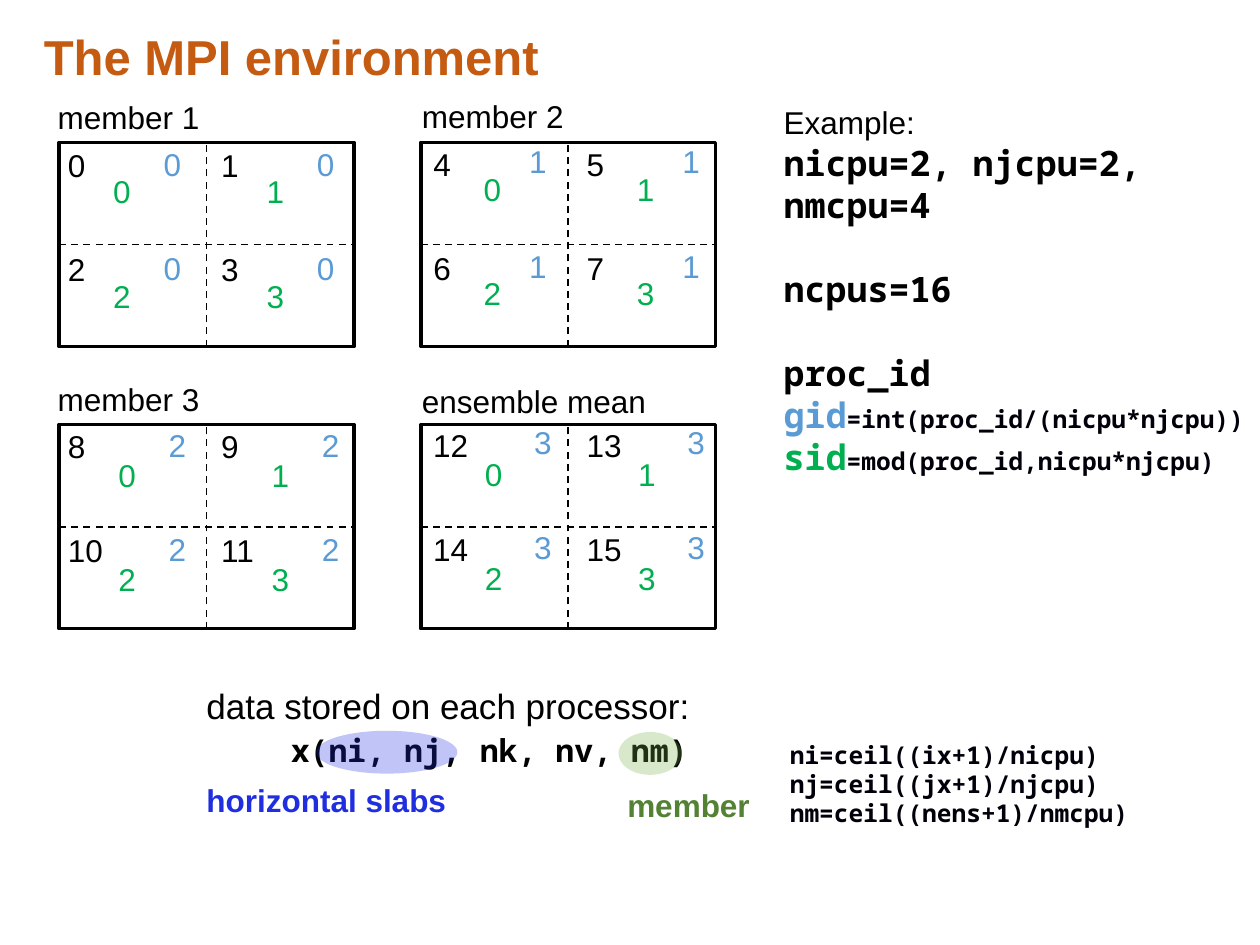
from itertools import product

from lxml.etree import SubElement
from pptx import Presentation
from pptx.dml.color import RGBColor
from pptx.enum.dml import MSO_LINE
from pptx.enum.shapes import MSO_CONNECTOR, MSO_SHAPE
from pptx.enum.text import MSO_AUTO_SIZE, PP_ALIGN
from pptx.oxml.ns import qn
from pptx.util import Inches, Pt

COLUMNS, ROWS = 100, 75
SANS, MONO = "Arial", "Noto Sans Mono"
BLACK, INK, BLUE, GREEN = "000000", "00000A", "5B9BD5", "00B050"


def color(code):
    return RGBColor.from_string(code)


class GridPage:
    """Draws styled elements on one page, placed by grid columns and rows."""

    def __init__(self, deck):
        self.page = deck.slides.add_slide(deck.slide_layouts[6])
        self.column = deck.slide_width / COLUMNS
        self.row = deck.slide_height / ROWS

    def place(self, left, top, width, height):
        return (round(left * self.column), round(top * self.row),
                round(width * self.column), round(height * self.row))

    def text_box(self, area, wrap=False):
        box = self.page.shapes.add_textbox(*self.place(*area))
        box.text_frame.word_wrap = wrap
        box.text_frame.auto_size = MSO_AUTO_SIZE.SHAPE_TO_FIT_TEXT
        return box.text_frame

    def style(self, font, size, code, face=SANS, bold=False):
        font.name, font.size, font.bold = face, Pt(size), bold
        font.color.rgb = color(code)

    def lines(self, area, texts, size=18, code=BLACK, face=SANS, bold=False, wrap=False, align=None):
        frame = self.text_box(area, wrap)
        for index, text in enumerate(texts):
            para = frame.add_paragraph() if index else frame.paragraphs[0]
            para.text, para.alignment = text, align
            self.style(para.font, size, code, face, bold)
        return frame

    def formula(self, frame, name, code, rest):
        para = frame.add_paragraph()
        for text, size, shade in ((name, 20, code), (rest, 14, INK)):
            span = para.add_run()
            span.text = text
            self.style(span.font, size, shade, MONO, True)

    def shape(self, kind, area):
        shape = self.page.shapes.add_shape(kind, *self.place(*area))
        shape.shadow.inherit = False
        return shape

    def highlight(self, area, code, opacity=28):
        oval = self.shape(MSO_SHAPE.OVAL, area)
        oval.fill.solid()
        oval.fill.fore_color.rgb = color(code)
        oval.line.fill.background()
        tint = oval.fill._xPr.find(".//" + qn("a:srgbClr"))
        SubElement(tint, qn("a:alpha")).set("val", str(opacity * 1000))

    def frame(self, area):
        outline = self.shape(MSO_SHAPE.RECTANGLE, area)
        outline.fill.background()
        outline.line.color.rgb = color(BLACK)
        outline.line.width = Pt(2)

    def dashed(self, left, top, right, bottom):
        ends = self.place(left, top, right, bottom)
        line = self.page.shapes.add_connector(MSO_CONNECTOR.STRAIGHT, *ends)
        line.line.color.rgb = color(BLACK)
        line.line.width = Pt(1)
        line.line.dash_style = MSO_LINE.DASH
        SubElement(line._element.spPr, qn("a:effectLst"))

    def panel(self, left, top, width=23.4, height=16.2):
        self.frame((left, top, width, height))
        self.dashed(left, top + height / 2, left + width, top + height / 2)
        self.dashed(left + width / 2, top + height, left + width / 2, top)

    def numbers(self, left, top, values, code):
        for value, (down, across) in zip(values, product(range(2), repeat=2)):
            text = str(value)
            area = (left + across * 12.17, top + down * 8.28, 2 + 1.39 * len(text), 4)
            self.lines(area, [text], code=code)


PANELS = [
    ("member 1", (3.6, 7.3, 13.4, 4), (4.4, 11.1), (8, 13.2), (12, 11)),
    ("member 2", (32.5, 7.2, 13.4, 4), (33.4, 11), (37.4, 13), (41, 10.8)),
    ("member 3", (3.6, 29.7, 13.4, 4), (4.4, 33.4), (8.4, 35.7), (12.4, 33.3)),
    ("ensemble mean", (32.5, 29.8, 20, 4), (33.4, 33.3), (37.5, 35.6), (41.4, 33.1)),
]


def main():
    deck = Presentation()
    deck.slide_width, deck.slide_height = Inches(10), Inches(7.5)
    page = GridPage(deck)

    page.lines((2.5, 1.6, 66.8, 5.7), ["The MPI environment"], 28, "C55A11", bold=True, wrap=True)
    page.lines((22.1, 57.5, 33.7, 4), ["x(ni, nj, nk, nv, nm)"], face=MONO, bold=True)
    page.lines((15.4, 53.8, 40.6, 4.4), ["data stored on each processor:"], 20)

    settings = ["Example:", "nicpu=2, njcpu=2, nmcpu=4", "ncpus=16", "proc_id"]
    example = page.lines((61.2, 7.7, 41.5, 31), settings, 20, face=MONO, bold=True, wrap=True)
    page.style(example.paragraphs[0].font, 18, BLACK)
    for para in example.paragraphs[2:]:
        para.space_before = Pt(24)
    page.formula(example, "gid", BLUE, "=int(proc_id/(nicpu*njcpu))")
    page.formula(example, "sid", GREEN, "=mod(proc_id,nicpu*njcpu)")

    page.highlight((25.1, 58, 11.2, 3.4), "1F2EDF")
    page.highlight((49.1, 58.1, 5, 3.4), "70AD47")
    page.lines((15.4, 61.5, 21.2, 4), ["horizontal slabs"], code="1F2EDF", bold=True)
    page.lines((48.8, 61.9, 11.8, 4), ["member"], code="548235", bold=True)

    for group, (label, title, process, sub, owner) in enumerate(PANELS):
        down, across = divmod(group, 2)
        page.panel(4.7 + across * 28.7, 11.3 + down * 22.4)
        page.lines(title, [label])
        page.numbers(*process, range(group * 4, group * 4 + 4), BLACK)
        page.numbers(*sub, range(4), GREEN)
        page.numbers(*owner, [group] * 4, BLUE)

    sizes = ["ni=ceil((ix+1)/nicpu)", "nj=ceil((jx+1)/njcpu)", "nm=ceil((nens+1)/nmcpu)"]
    page.lines((61.7, 58.2, 39.2, 8.1), sizes, 14, INK, MONO, True, True, PP_ALIGN.JUSTIFY)
    deck.save("out.pptx")


if __name__ == "__main__":
    main()
